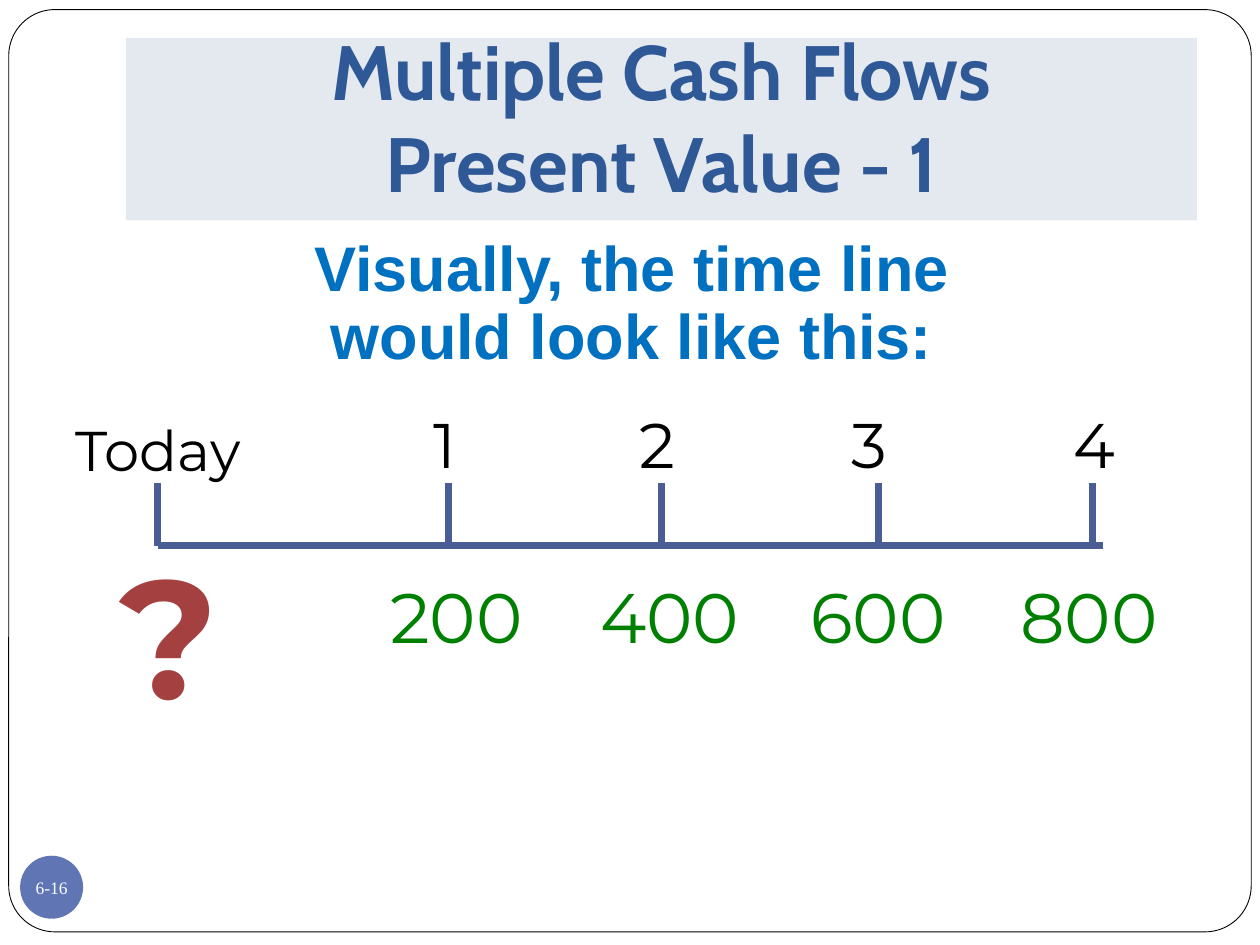
import pptx
import pptx.dml.color
import pptx.enum.shapes
import pptx.enum.text
import pptx.oxml
import pptx.oxml.ns
import pptx.util

Pt = pptx.util.Pt
SHAPE = pptx.enum.shapes.MSO_SHAPE
ANCHOR = pptx.enum.text.MSO_ANCHOR
ALIGN = pptx.enum.text.PP_ALIGN


def color(hex_code):
    return pptx.dml.color.RGBColor.from_string(hex_code)


class TimelineSlide:
    """Draws the elements of a cash-flow time line on one slide, in points."""

    line_color = "4A5D94"
    line_width = 4
    body_font = "Montserrat"

    def __init__(self, slide):
        self.shapes = slide.shapes

    def panel(self, kind, box, fill, outline=None):
        panel = self.shapes.add_shape(kind, *map(Pt, box))
        panel.shadow.inherit = False
        panel.fill.solid()
        panel.fill.fore_color.rgb = color(fill)
        if outline:
            panel.line.color.rgb = color(outline)
            panel.line.width = Pt(0.5)
        else:
            panel.line.fill.background()
        return panel

    def set_text(self, frame, text, size, ink, font=None, bold=False,
                 align=ALIGN.LEFT, spacing=None):
        frame.text = text
        for paragraph in frame.paragraphs:
            paragraph.alignment = align
            paragraph.line_spacing = spacing
            paragraph.font.name = font or self.body_font
            paragraph.font.size = Pt(size)
            paragraph.font.bold = bold
            paragraph.font.color.rgb = color(ink)

    def label(self, box, text, size, ink, **style):
        frame = self.shapes.add_textbox(*map(Pt, box)).text_frame
        frame.word_wrap = True
        self.set_text(frame, text, size, ink, **style)

    def line(self, *ends):
        line = self.shapes.add_connector(
            pptx.enum.shapes.MSO_CONNECTOR.STRAIGHT, *map(Pt, ends))
        line.line.color.rgb = color(self.line_color)
        line.line.width = Pt(self.line_width)
        properties = line._element.spPr
        properties.append(properties.makeelement(
            pptx.oxml.ns.qn("a:effectLst"), {}))


def main():
    deck = pptx.Presentation()
    deck.slide_width, deck.slide_height = Pt(720), Pt(540)
    page = TimelineSlide(deck.slides.add_slide(deck.slide_layouts[6]))

    border = page.panel(SHAPE.ROUNDED_RECTANGLE, (5, 5.5, 710, 527),
                        "FFFFFF", "000000")
    border.adjustments[0] = 0.05

    page_number = page.panel(SHAPE.OVAL, (11.5, 489, 36, 36), "6076B4").text_frame
    page_number.margin_left = page_number.margin_right = 0
    page_number.margin_top = page_number.margin_bottom = 0
    page_number.word_wrap = False
    page_number.vertical_anchor = ANCHOR.MIDDLE
    page.set_text(page_number, "6-16", 10, "FFFFFF", font="Times New Roman",
                  align=ALIGN.CENTER)

    title = page.panel(SHAPE.RECTANGLE, (72, 21.6, 612, 104.4), "E4E9EF").text_frame
    title.margin_bottom = Pt(7.2)
    title.vertical_anchor = ANCHOR.BOTTOM
    page.set_text(title, "Multiple Cash Flows\vPresent Value - 1", 44, "2F5897",
                  font="Cabin", bold=True, align=ALIGN.CENTER)

    page.label((30, 132, 672, 86),
               "Visually, the time line \nwould look like this: ", 36, "0070C0",
               font="Arial", bold=True, align=ALIGN.CENTER, spacing=0.9)

    today, tick_top, axis = 90, 276, 312
    page.line(today, axis, 630, axis)
    page.line(today, tick_top, today, axis)
    page.label((36, 234, 126, 46), "Today", 32, "000000")
    page.label((60, 300, 73.5, 124), "?", 96, "A54040", bold=True,
               align=ALIGN.CENTER)

    years = [(256.3, 240.5), (378, 358.6), (501.8, 479.5), (624.2, 606.2)]
    for year, (tick, year_left) in enumerate(years, start=1):
        page.line(tick, tick_top, tick, axis)
        page.label((year_left, 228, 42, 51), str(year), 36, "000000")
        page.label((96 + 120 * year, 324, 102, 55), str(200 * year), 40, "008000")

    deck.save("out.pptx")


if __name__ == "__main__":
    main()
